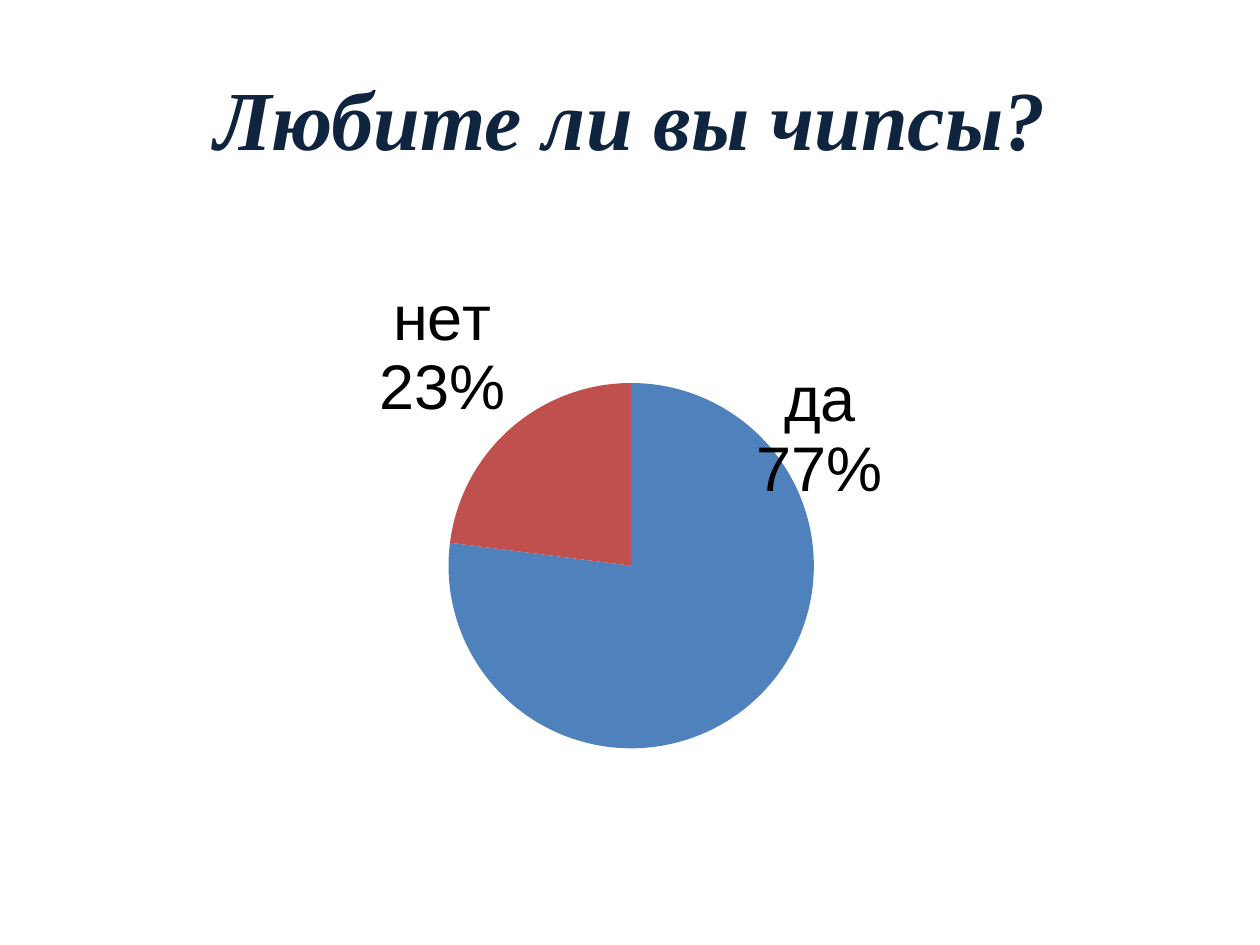
import copy

import pptx
import pptx.chart.data
import pptx.dml.color
import pptx.enum.chart
import pptx.enum.text
import pptx.oxml
import pptx.oxml.ns
import pptx.util
from pptx.util import Inches

NAVY = pptx.dml.color.RGBColor(0x0F, 0x24, 0x3E)
BLACK = pptx.dml.color.RGBColor(0x00, 0x00, 0x00)
BLUE = pptx.dml.color.RGBColor(0x4F, 0x81, 0xBD)
RED = pptx.dml.color.RGBColor(0xC0, 0x50, 0x4D)

ANSWERS = [("да", 77, BLUE), ("нет", 23, RED)]


def chart_element(xml):
    """Parse one chart element, adding the chart namespace to it."""
    namespace = pptx.oxml.ns.nsdecls("c")
    return pptx.oxml.parse_xml(xml.replace(">", f" {namespace}>", 1))


def add_title(slide, left, top, width, height):
    box = slide.shapes.add_textbox(left, top, width, height)
    frame = box.text_frame
    frame.word_wrap = True
    frame.vertical_anchor = pptx.enum.text.MSO_ANCHOR.MIDDLE
    paragraph = frame.paragraphs[0]
    paragraph.alignment = pptx.enum.text.PP_ALIGN.CENTER
    run = paragraph.add_run()
    run.text = "Любите ли вы чипсы?"
    run.font.name = "Times New Roman"
    run.font.size = pptx.util.Pt(48)
    run.font.bold = True
    run.font.italic = True
    run.font.color.rgb = NAVY


def style_labels(series):
    """Show answer and percentage on two lines; raise the first label."""
    labels = series.data_labels
    labels.show_value = False
    labels.show_category_name = True
    labels.show_percentage = True
    labels.number_format = "0%"
    labels.number_format_is_linked = False
    labels.position = pptx.enum.chart.XL_LABEL_POSITION.OUTSIDE_END
    labels.font.name = "Arial"
    labels.font.size = pptx.util.Pt(36)
    labels.font.color.rgb = BLACK

    group = series.format and labels._element
    last_flag = group.find(pptx.oxml.ns.qn("c:showBubbleSize"))
    if last_flag is None:
        last_flag = chart_element('<c:showBubbleSize val="0"></c:showBubbleSize>')
        group.find(pptx.oxml.ns.qn("c:showPercent")).addnext(last_flag)
    last_flag.addnext(chart_element("<c:separator>\n</c:separator>"))

    # Offset is a fraction of the chart's size
    raised = chart_element(
        '<c:dLbl><c:idx val="0"/><c:layout><c:manualLayout>'
        '<c:x val="0"/><c:y val="-0.55"/>'
        "</c:manualLayout></c:layout></c:dLbl>"
    )
    for child in group:
        if child.tag != pptx.oxml.ns.qn("c:showLeaderLines"):
            raised.append(copy.deepcopy(child))
    group.insert(0, raised)


def add_answer_pie(slide, left, top, width, height):
    data = pptx.chart.data.CategoryChartData()
    data.categories = [answer for answer, _, _ in ANSWERS]
    data.add_series("Series 1", [share for _, share, _ in ANSWERS])
    chart = slide.shapes.add_chart(
        pptx.enum.chart.XL_CHART_TYPE.PIE, left, top, width, height, data
    ).chart
    chart.has_title = False
    chart.has_legend = False
    chart.font.name = "Arial"
    chart.font.size = pptx.util.Pt(18)
    chart.font.color.rgb = BLACK

    # Slices
    plot = chart.plots[0]
    plot.vary_by_categories = True
    series = plot.series[0]
    for index, (_, _, color) in enumerate(ANSWERS):
        fill = series.points[index].format.fill
        fill.solid()
        fill.fore_color.rgb = color
    style_labels(series)

    # Circle's place within the chart
    diameter = Inches(2.9)
    fractions = {
        "x": Inches(3.05) / width,
        "y": Inches(1.02) / height,
        "w": diameter / width,
        "h": diameter / height,
    }
    layout = chart_element(
        '<c:layout><c:manualLayout><c:layoutTarget val="inner"/>'
        '<c:xMode val="edge"/><c:yMode val="edge"/>'
        + "".join(f'<c:{key} val="{value:.4f}"/>' for key, value in fractions.items())
        + "</c:manualLayout></c:layout>"
    )
    plot_area = chart._chartSpace.chart.plotArea
    for old_layout in plot_area.findall(pptx.oxml.ns.qn("c:layout")):
        plot_area.remove(old_layout)
    plot_area.insert(0, layout)


def main():
    presentation = pptx.Presentation()
    presentation.slide_width = Inches(10)
    presentation.slide_height = Inches(7.5)
    slide = presentation.slides.add_slide(presentation.slide_layouts[6])
    add_title(slide, Inches(0.5), Inches(0.3), Inches(9), Inches(1.25))
    add_answer_pie(slide, Inches(0.51), Inches(2.02), Inches(9), Inches(4.95))
    presentation.save("out.pptx")


if __name__ == "__main__":
    main()
